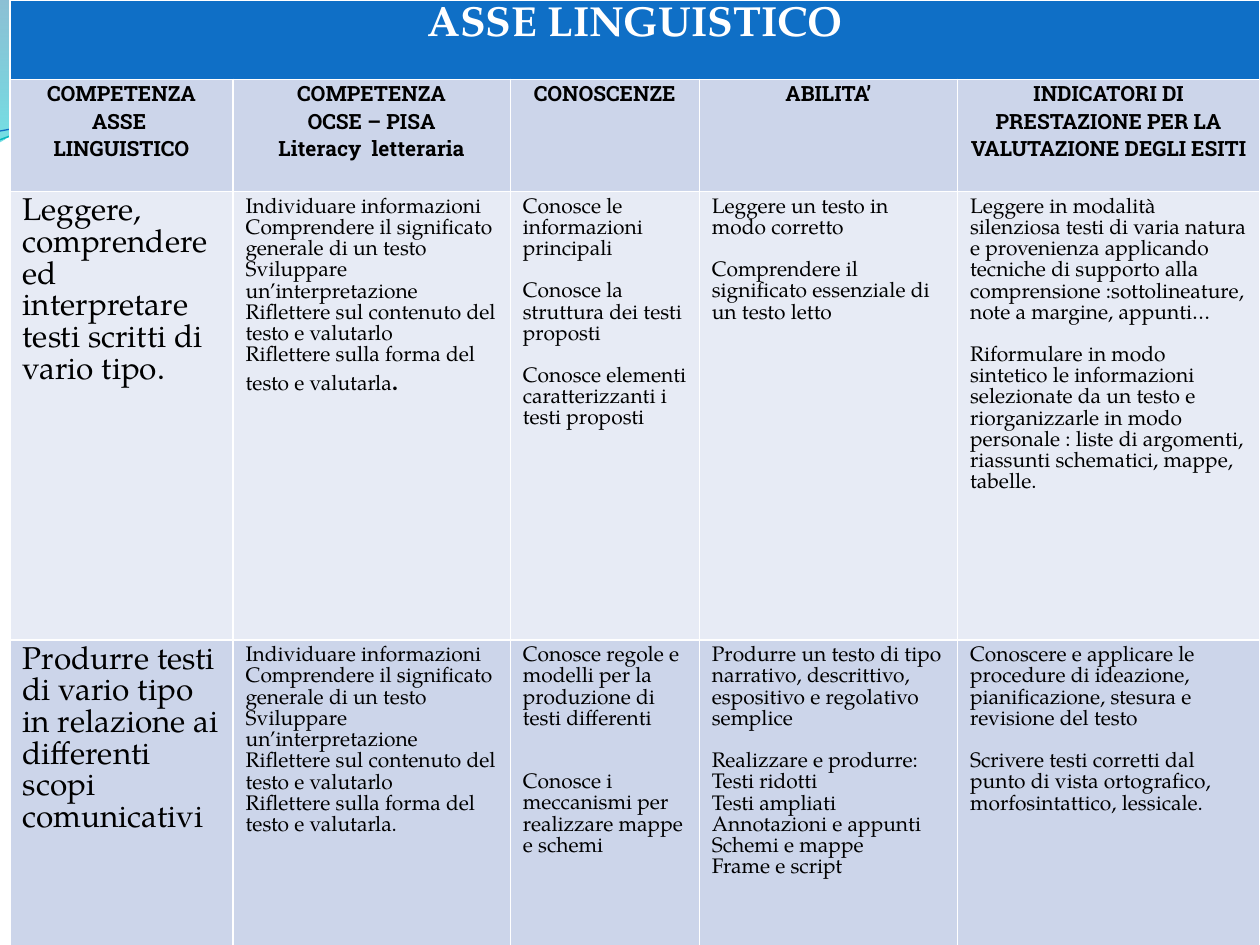
from math import cos, radians, sin

from lxml.etree import SubElement
from pptx import Presentation
from pptx.dml.color import RGBColor
from pptx.enum.text import MSO_ANCHOR, PP_ALIGN
from pptx.oxml.ns import qn
from pptx.util import Inches, Pt

COLORS = {
    "title": "0F6FC6", "band": "CCD5EA", "light": "E7EBF5",
    "white": "FFFFFF", "black": "000000",
    "wave_top": "0074A1", "wave_bottom": "00C6CF",
    "crest_top": "00A1A9", "crest_bottom": "008BBF",
    "line_teal": "0AB8BF", "line_blue": "0F6FC6",
}
SERIF, SLAB = "TeX Gyre Pagella", "Roboto Slab"
COLUMNS = (1.77, 2.2, 1.5, 2.05, 2.4)
ROWS = (0.63, 0.89, 3.56, 2.52)

# Text formats: cell margins are (sides, top and bottom)
TITLE = {"size": 24, "name": SERIF, "bold": True, "color": "white",
         "align": PP_ALIGN.CENTER, "margins": (0.1, 0.05)}
HEADER = {"size": 12, "name": SLAB, "bold": True, "color": "black",
          "align": PP_ALIGN.CENTER, "margins": (0.08, 0)}
BODY = {"size": 12, "name": SERIF, "bold": False, "color": "black",
        "align": PP_ALIGN.LEFT, "margins": (0.1, 0.05)}
LEAD = {**BODY, "size": 18}

# Each cell is a list of paragraphs; a number is the gap in points before the next
HEADERS = [
    ["COMPETENZA", "ASSE ", "LINGUISTICO"],
    ["COMPETENZA", "OCSE – PISA", "Literacy  letteraria"],
    ["CONOSCENZE"],
    ["ABILITA’"],
    ["INDICATORI DI PRESTAZIONE PER LA VALUTAZIONE DEGLI ESITI"],
]
PISA_SKILLS = [
    "Individuare informazioni",
    "Comprendere il significato generale di un testo",
    "Sviluppare un’interpretazione",
    "Riflettere sul contenuto del testo e valutarlo",
    "Riflettere sulla forma del testo e valutarla",
]
READING = [
    ["Leggere, comprendere ed interpretare testi scritti di vario tipo."],
    PISA_SKILLS,
    ["Conosce le informazioni principali", 12,
     "Conosce la struttura dei testi proposti", 12,
     "Conosce elementi caratterizzanti i testi proposti"],
    ["Leggere un testo in modo corretto", 12,
     "Comprendere il significato essenziale di un testo letto"],
    ["Leggere in modalità silenziosa testi di varia natura e provenienza applicando "
     "tecniche di supporto alla comprensione :sottolineature, note a margine, appunti…", 12,
     "Riformulare in modo sintetico le informazioni selezionate da un testo e "
     "riorganizzarle in modo personale : liste di argomenti, riassunti schematici, "
     "mappe, tabelle."],
]
WRITING = [
    ["Produrre testi di vario tipo in relazione ai differenti scopi comunicativi"],
    PISA_SKILLS,
    ["Conosce regole e modelli per la produzione di testi differenti", 24,
     "Conosce i meccanismi per realizzare mappe e schemi"],
    ["Produrre un testo di tipo narrativo, descrittivo, espositivo e regolativo semplice", 12,
     "Realizzare e produrre:", "Testi ridotti", "Testi ampliati",
     "Annotazioni e appunti", "Schemi e mappe", "Frame e script"],
    ["Conoscere e applicare le procedure di ideazione, pianificazione, stesura e "
     "revisione del testo", 12,
     "Scrivere testi corretti dal punto di vista ortografico, morfosintattico, lessicale."],
]

# Outlines: a pair is a straight step, a sextet a Bezier curve
# Filled waves: gradient stops (colour, position, opacity in %) and outline
WAVES = [
    ([("wave_top", 0, 45), ("wave_bottom", 1, 55)],
     [(0, 0), (4.4, -0.01), (4.76, 0.17, 6.64, 0.63, 7.58, 0.63),
      (8.53, 0.63, 9.58, 0.26, 10, 0.09), (10.01, 0.36),
      (9.83, 0.44, 8.7, 0.76, 7.46, 0.75), (6.22, 0.75, 3.82, 0.28, 2.57, 0.34),
      (1.29, 0.36, 0.46, 0.83, -0.01, 1.13)]),
    ([("crest_top", 0, 30), ("crest_bottom", 0.8, 45)],
     [(4.79, -0.01), (5.09, 0.11, 6.82, 0.62, 7.69, 0.65),
      (8.56, 0.69, 9.61, 0.32, 10, 0.21), (10, 0)]),
]
# Thin lines: colour, width and outline as it lies after turning
WAVE_LINES = [
    ("line_teal", 0.85,
     [(0, 1.11), (0.48, 0.93, 1.58, 0.57, 2.77, 0.52),
      (3.95, 0.47, 5.93, 0.89, 7.13, 0.8), (8.33, 0.71, 9.38, 0.15, 9.98, -0.02)]),
    ("line_blue", 0.75,
     [(0, 1.04), (0.47, 0.96, 1.64, 0.61, 2.83, 0.56),
      (4.03, 0.51, 5.97, 0.84, 7.17, 0.75), (8.36, 0.67, 9.41, 0.21, 10, 0.06)]),
]
LINE_TURN, LINE_CENTER = 357.3, (5, 0.58)


def rgb(name):
    return RGBColor.from_string(COLORS[name])


def turn_back(x, y, degrees):
    """Undo a clockwise turn about the centre of the lines."""
    angle = radians(-degrees)
    dx, dy = x - LINE_CENTER[0], y - LINE_CENTER[1]
    return (LINE_CENTER[0] + dx * cos(angle) - dy * sin(angle),
            LINE_CENTER[1] + dx * sin(angle) + dy * cos(angle))


def add_outline(slide, left, top, steps, close, turn=0):
    pairs = [step[i:i + 2] for step in steps for i in range(0, len(step), 2)]
    turned = [turn_back(x, y, turn) for x, y in pairs]
    points = [(Inches(left + x), Inches(top + y)) for x, y in turned]
    builder = slide.shapes.build_freeform(*points[0])
    builder.add_line_segments(points[1:], close=close)
    shape = builder.convert_to_shape()
    shape.shadow.inherit = False
    shape.rotation = turn
    # Join every three segments of a curve into one Bezier segment
    segments = iter(list(shape._element.iter(qn("a:lnTo"))))
    for step in steps[1:]:
        segment = next(segments)
        if len(step) == 6:
            segment.tag = qn("a:cubicBezTo")
            for _ in range(2):
                extra = next(segments)
                segment.append(extra[0])
                extra.getparent().remove(extra)
    return shape


def add_waves(slide, left, top):
    # Translucent waves
    for stops, steps in WAVES:
        wave = add_outline(slide, left, top, steps, close=True)
        wave.line.fill.background()
        wave.fill.gradient()
        wave.fill.gradient_angle = 270
        for stop, (name, position, _) in zip(wave.fill.gradient_stops, stops):
            stop.color.rgb = rgb(name)
            stop.position = position
        for color, (_, _, opacity) in zip(wave._element.spPr.iter(qn("a:srgbClr")), stops):
            SubElement(color, qn("a:alpha"), val=str(opacity * 1000))
    # Thin lines along them
    for name, width, steps in WAVE_LINES:
        line = add_outline(slide, left, top, steps, close=False, turn=LINE_TURN)
        line.fill.background()
        line.line.color.rgb = rgb(name)
        line.line.width = Pt(width)


def add_run(paragraph, text, style, size=None):
    run = paragraph.add_run()
    run.text = text
    values = {"size": Pt(size or style["size"]), "name": style["name"], "bold": style["bold"]}
    for attribute, value in values.items():
        setattr(run.font, attribute, value)
    run.font.color.rgb = rgb(style["color"])


def fill_cell(cell, content, style, fill):
    sides, ends = (Inches(margin) for margin in style["margins"])
    values = {"margin_left": sides, "margin_right": sides, "margin_top": ends,
              "margin_bottom": ends, "vertical_anchor": MSO_ANCHOR.TOP}
    for attribute, value in values.items():
        setattr(cell, attribute, value)
    # White borders
    properties = cell._tc.get_or_add_tcPr()
    for side in ("lnL", "lnR", "lnT", "lnB"):
        border = SubElement(properties, qn(f"a:{side}"), w=str(Pt(1)))
        SubElement(SubElement(border, qn("a:solidFill")), qn("a:srgbClr"), val=COLORS["white"])
    cell.fill.solid()
    cell.fill.fore_color.rgb = rgb(fill)
    # Paragraphs
    paragraph, gap = cell.text_frame.paragraphs[0], 0
    for index, item in enumerate(content):
        if isinstance(item, int):
            gap = item
            continue
        if index:
            paragraph = cell.text_frame.add_paragraph()
        paragraph.alignment = style["align"]
        paragraph.space_before = Pt(gap)
        add_run(paragraph, item, style)
        gap = 0


def add_competence_table(slide, left, top, width, height):
    frame = slide.shapes.add_table(len(ROWS), len(COLUMNS), Inches(left), Inches(top),
                                   Inches(width), Inches(height))
    table = frame.table
    table.first_row = table.horz_banding = False
    for column, share in zip(table.columns, COLUMNS):
        column.width = Inches(width * share / sum(COLUMNS))
    for row, share in zip(table.rows, ROWS):
        row.height = Inches(height * share / sum(ROWS))
    # Title band
    table.cell(0, 0).merge(table.cell(0, len(COLUMNS) - 1))
    fill_cell(table.cell(0, 0), ["ASSE LINGUISTICO"], TITLE, "title")
    # Header and body rows
    rows = [(HEADERS, HEADER, HEADER, "band"),
            (READING, LEAD, BODY, "light"), (WRITING, LEAD, BODY, "band")]
    for row, (contents, first_style, style, fill) in enumerate(rows, start=1):
        for column, content in enumerate(contents):
            fill_cell(table.cell(row, column), content, style if column else first_style, fill)
    # Full stops that close the skill lists, the first one larger
    for row, size in ((2, 18), (3, 12)):
        add_run(table.cell(row, 1).text_frame.paragraphs[-1], ".", BODY, size)


def main():
    presentation = Presentation()
    presentation.slide_width, presentation.slide_height = Inches(10), Inches(7.5)
    slide = presentation.slides.add_slide(presentation.slide_layouts[6])
    add_waves(slide, 0, 0)
    add_competence_table(slide, 0.08, 0, 9.92, 7.6)
    presentation.save("out.pptx")


if __name__ == "__main__":
    main()
